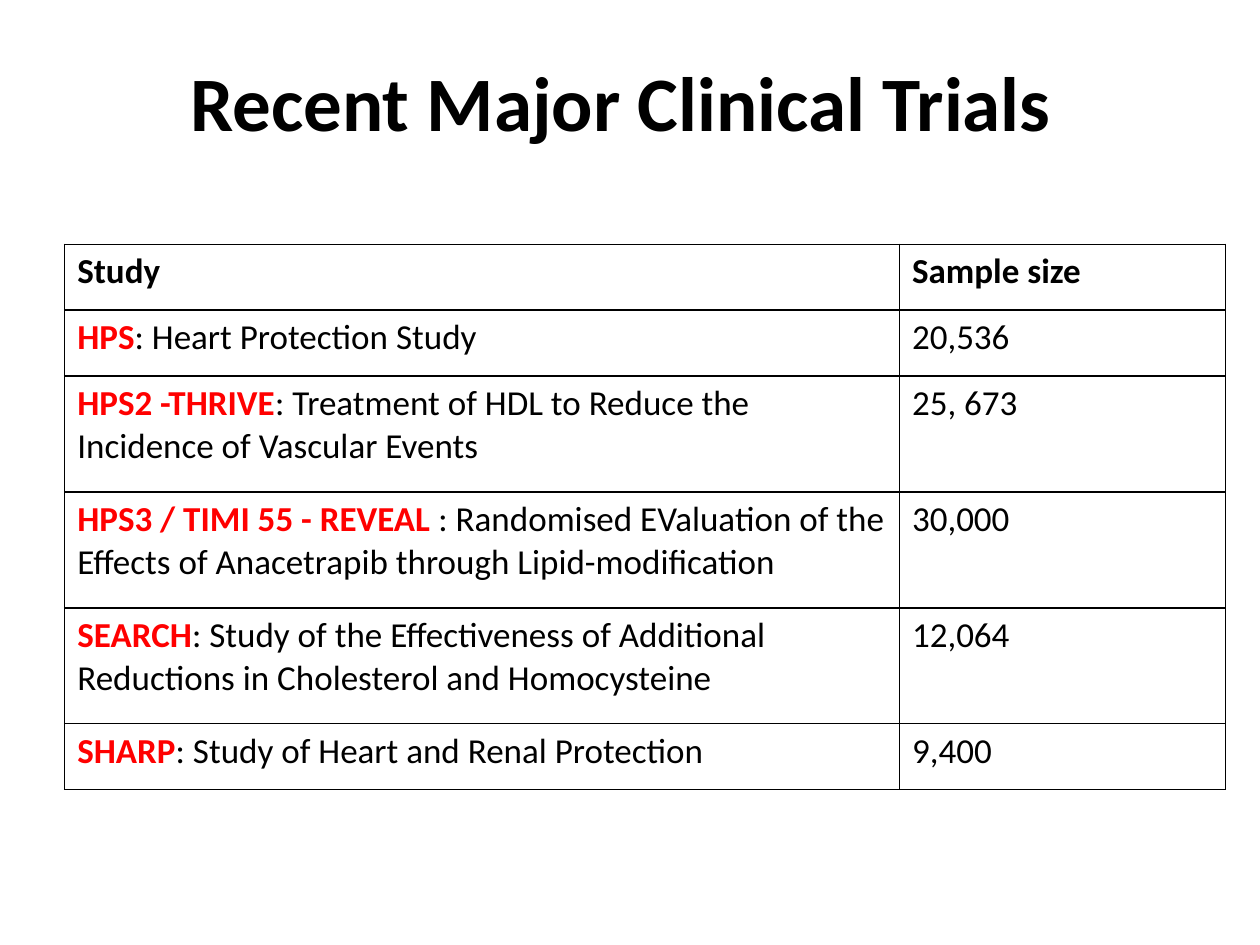
"""Build a slide with a table of recent major clinical trials."""
from lxml import etree
from pptx import Presentation
from pptx import util as u
from pptx.dml.color import RGBColor
from pptx.enum import text
from pptx.oxml import ns

BLACK = RGBColor(0x00, 0x00, 0x00)
RED = RGBColor(0xFF, 0x00, 0x00)
WHITE = RGBColor(0xFF, 0xFF, 0xFF)
FONT = "Calibri"

TITLE = "Recent Major Clinical Trials"
HEADERS = ("Study", "Sample size")
TRIALS = [
    ("HPS", ": Heart Protection Study", "20,536"),
    ("HPS2 -THRIVE", ": Treatment of HDL to Reduce the Incidence of Vascular Events", "25, 673"),
    ("HPS3 / TIMI 55 - REVEAL ", ": Randomised EValuation of the Effects of Anacetrapib "
     "through Lipid-modification", "30,000"),
    ("SEARCH", ": Study of the Effectiveness of Additional Reductions in Cholesterol "
     "and Homocysteine", "12,064"),
    ("SHARP", ": Study of Heart and Renal Protection", "9,400"),
]

TITLE_BOX = {"left": 31, "top": 9.5, "width": 648, "height": 96.5}
TABLE_LEFT, TABLE_TOP = 37, 139.6
COLUMN_WIDTHS = (477, 186.4)
SHORT_ROW, TALL_ROW = 37.7, 66.2
LINE_CAPACITY = 60

TITLE_STYLE = {"name": FONT, "size": u.Pt(44), "bold": True}
BODY_STYLE = {"name": FONT, "size": u.Pt(20), "bold": False}
HEADING_STYLE = {**BODY_STYLE, "bold": True}


def add_run(paragraph, words, style, color=BLACK):
    run = paragraph.add_run()
    run.text = words
    for name, value in style.items():
        setattr(run.font, name, value)
    run.font.color.rgb = color


def add_borders(cell):
    properties = cell._tc.get_or_add_tcPr()
    for position, side in enumerate(("lnL", "lnR", "lnT", "lnB")):
        line = etree.Element(ns.qn(f"a:{side}"), w=str(u.Pt(1)))
        fill = etree.SubElement(line, ns.qn("a:solidFill"))
        etree.SubElement(fill, ns.qn("a:srgbClr"), val=str(BLACK))
        properties.insert(position, line)


def add_title(slide):
    title = slide.shapes.title
    for name, value in TITLE_BOX.items():
        setattr(title, name, u.Pt(value))
    frame = title.text_frame
    frame.word_wrap = True
    frame.vertical_anchor = text.MSO_ANCHOR.MIDDLE
    paragraph = frame.paragraphs[0]
    paragraph.alignment = text.PP_ALIGN.CENTER
    add_run(paragraph, TITLE, TITLE_STYLE)


def add_trials(slide):
    rows = [[[(header, HEADING_STYLE, BLACK)] for header in HEADERS]]
    rows += [
        [[(name, HEADING_STYLE, RED), (meaning, BODY_STYLE, BLACK)], [(size, BODY_STYLE, BLACK)]]
        for name, meaning, size in TRIALS
    ]
    heights = [SHORT_ROW] + [
        TALL_ROW if len(name + meaning) > LINE_CAPACITY else SHORT_ROW
        for name, meaning, size in TRIALS
    ]
    bounds = (TABLE_LEFT, TABLE_TOP, sum(COLUMN_WIDTHS), sum(heights))
    table = slide.shapes.add_table(len(rows), len(HEADERS), *map(u.Pt, bounds)).table
    table.horz_banding = False
    for column, width in zip(table.columns, COLUMN_WIDTHS):
        column.width = u.Pt(width)
    for row, height, contents in zip(table.rows, heights, rows):
        row.height = u.Pt(height)
        for cell, runs in zip(row.cells, contents):
            cell.fill.solid()
            cell.fill.fore_color.rgb = WHITE
            add_borders(cell)
            for words, style, color in runs:
                add_run(cell.text_frame.paragraphs[0], words, style, color)


def main():
    presentation = Presentation()
    presentation.slide_width, presentation.slide_height = u.Pt(720), u.Pt(540)
    slide = presentation.slides.add_slide(presentation.slide_layouts.get_by_name("Title Only"))
    add_title(slide)
    add_trials(slide)
    presentation.save("out.pptx")


if __name__ == "__main__":
    main()
